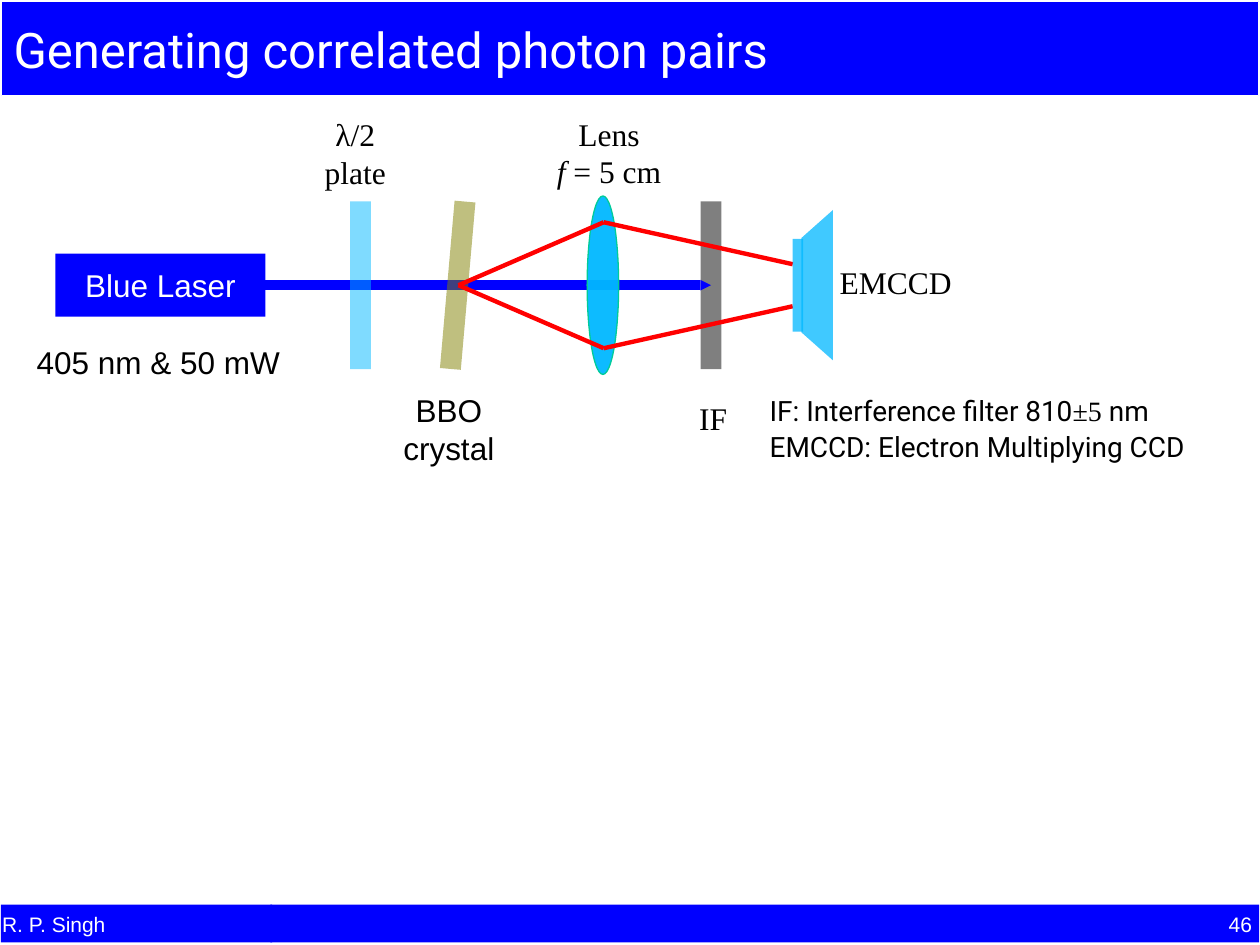
import pptx
import pptx.util
import pptx.dml.color
import pptx.enum.shapes
import pptx.enum.text
import pptx.oxml.ns
import lxml.etree

Pt = pptx.util.Pt
SHAPE = pptx.enum.shapes.MSO_SHAPE
ALIGN = pptx.enum.text.PP_ALIGN
ANCHOR = pptx.enum.text.MSO_ANCHOR
BLUE, CYAN, RED, WHITE, BLACK = "0000FF", "00B8FF", "FF0000", "FFFFFF", "000000"
SERIF = "Times New Roman"


def color(value):
    return pptx.dml.color.RGBColor.from_string(value)


def paint(shape, fill, opacity=100, outline=None):
    shape.shadow.inherit = False
    shape.fill.solid()
    shape.fill.fore_color.rgb = color(fill)
    if opacity < 100:
        tint = shape.fill._xPr.find(".//" + pptx.oxml.ns.qn("a:srgbClr"))
        alpha = lxml.etree.SubElement(tint, pptx.oxml.ns.qn("a:alpha"))
        alpha.set("val", str(opacity * 1000))
    if outline:
        shape.line.color.rgb = color(outline)
        shape.line.width = Pt(0.75)
    else:
        shape.line.fill.background()
    return shape


def add_block(slide, box, fill, opacity=100, outline=None, kind=SHAPE.RECTANGLE):
    shape = slide.shapes.add_shape(kind, *map(Pt, box))
    return paint(shape, fill, opacity, outline)


def add_outline(slide, points, fill, opacity=100):
    corners = [(Pt(x), Pt(y)) for x, y in points]
    builder = slide.shapes.build_freeform(*corners[0])
    builder.add_line_segments(corners[1:], close=True)
    return paint(builder.convert_to_shape(), fill, opacity)


def add_ray(slide, start, end, ink, width):
    straight = pptx.enum.shapes.MSO_CONNECTOR.STRAIGHT
    ray = slide.shapes.add_connector(straight, *map(Pt, start + end))
    ray.line.color.rgb = color(ink)
    ray.line.width = Pt(width)
    lxml.etree.SubElement(ray._element.spPr, pptx.oxml.ns.qn("a:effectLst"))
    return ray


def style_run(run, size, font, ink):
    run.font.size = Pt(size)
    run.font.name = font
    run.font.color.rgb = color(ink)


def write(frame, lines, size, font, ink, align=ALIGN.LEFT):
    frame.text = "\n".join(lines)
    for paragraph in frame.paragraphs:
        paragraph.alignment = align
        for run in paragraph.runs:
            style_run(run, size, font, ink)


def add_caption(slide, box, lines, font=SERIF):
    frame = slide.shapes.add_textbox(*map(Pt, box)).text_frame
    frame.word_wrap = False
    frame.auto_size = pptx.enum.text.MSO_AUTO_SIZE.SHAPE_TO_FIT_TEXT
    write(frame, lines, 18, font, BLACK, ALIGN.CENTER)
    return frame


def add_title(slide, box):
    frame = add_block(slide, box, BLUE, outline=WHITE).text_frame
    frame.vertical_anchor = ANCHOR.MIDDLE
    write(frame, ["Generating correlated photon pairs"], 28, "Roboto", WHITE)


def add_optics(slide, box):
    left, top, width, height = box
    axis = top + 101
    plate_width, plate_height = 12, 96

    def centred(x, w, h):
        return left + x, axis - h / 2, w, h

    def plate(x, fill):
        return add_block(slide, centred(x, plate_width, plate_height), fill, 50)

    laser = add_block(slide, centred(17.7, 120, 36), BLUE)
    laser.text_frame.word_wrap = False
    laser.text_frame.vertical_anchor = ANCHOR.MIDDLE
    write(laser.text_frame, ["Blue Laser"], 18, "Arial", WHITE, ALIGN.CENTER)

    filter_x = 386.3
    beam = add_ray(slide, (left + 137.7, axis), (left + filter_x, axis), BLUE, 6)
    beam.begin_connect(laser, 3)
    plate(186, CYAN)
    plate(241.6, "808000").rotation = 5
    add_block(slide, centred(321.5, 18, 102), CYAN, 95, "00CC99", SHAPE.OVAL)
    beam.end_connect(plate(filter_x, BLACK), 1)

    for side in (-1, 1):
        crystal = (left + 248, axis)
        lens = (left + 331, axis + side * 36)
        detector = (left + 439, axis + side * 12)
        add_ray(slide, crystal, lens, RED, 2.5)
        add_ray(slide, lens, detector, RED, 2.5)

    add_block(slide, centred(439, 6, 53), CYAN, 75)
    near, far = left + 444, left + 462
    horn = [(far, axis - 43), (near, axis - 27), (near, axis + 27), (far, axis + 43)]
    add_outline(slide, horn, CYAN, 75)
    tip = left + filter_x
    add_outline(slide, [(tip, axis + 3), (tip + 6, axis), (tip, axis - 3)], BLUE)

    captions = [
        ((-8.5, 130.5, 170, 29), ["405 nm & 50 mW"], "Arial"),
        ((202.5, 158, 80, 50), ["BBO", "crystal"], "Arial"),
        ((373.5, 162.5, 40, 29), ["IF"], SERIF),
        ((452.8, 85, 90, 29), ["EMCCD"], SERIF),
        ((159, 0.4, 60, 50), ["λ/2", "plate"], SERIF),
    ]
    for (x, y, w, h), lines, font in captions:
        add_caption(slide, (left + x, top + y, w, h), lines, font)

    lens_label = add_caption(slide, (left + 289, top, 90, 50), ["Lens", "f"])
    focal = lens_label.paragraphs[1]
    focal.runs[0].font.italic = True
    length = focal.add_run()
    length.text = " = 5 cm"
    style_run(length, 18, SERIF, BLACK)


def add_legend(slide, box):
    frame = slide.shapes.add_textbox(*map(Pt, box)).text_frame
    frame.word_wrap = True
    frame.vertical_anchor = ANCHOR.MIDDLE
    lines = ["IF: Interference filter 810", "EMCCD: Electron Multiplying CCD"]
    write(frame, lines, 16, "Roboto", BLACK)
    filter_line, camera_line = frame.paragraphs
    for text, font in (("±5", SERIF), (" nm", "Roboto")):
        run = filter_line.add_run()
        run.text = text
        style_run(run, 16, font, BLACK)
    filter_line.line_spacing = camera_line.line_spacing = 0.8
    camera_line.space_before = Pt(5)


def add_footer(slide, box):
    left, top, width, height = box
    split = 154
    parts = [
        ((left + split, top, width - split, height), "46", ALIGN.RIGHT, 4),
        ((left, top, split + 1, height), "R. P. Singh", ALIGN.LEFT, 0.7),
    ]
    for area, text, align, right_margin in parts:
        frame = add_block(slide, area, BLUE).text_frame
        frame.margin_left = frame.margin_top = frame.margin_bottom = Pt(0.7)
        frame.margin_right = Pt(right_margin)
        frame.vertical_anchor = ANCHOR.MIDDLE
        write(frame, [text], 12, "Arial", WHITE, align)


def main():
    deck = pptx.Presentation()
    deck.slide_width, deck.slide_height = Pt(720), Pt(540)
    slide = deck.slides.add_slide(deck.slide_layouts[6])
    add_title(slide, (0.7, 0.7, 718.6, 54))
    add_optics(slide, (14, 62, 540, 208))
    add_legend(slide, (432.7, 222, 281, 49))
    add_footer(slide, (0.5, 517, 719, 21.6))
    deck.save("out.pptx")


if __name__ == "__main__":
    main()
